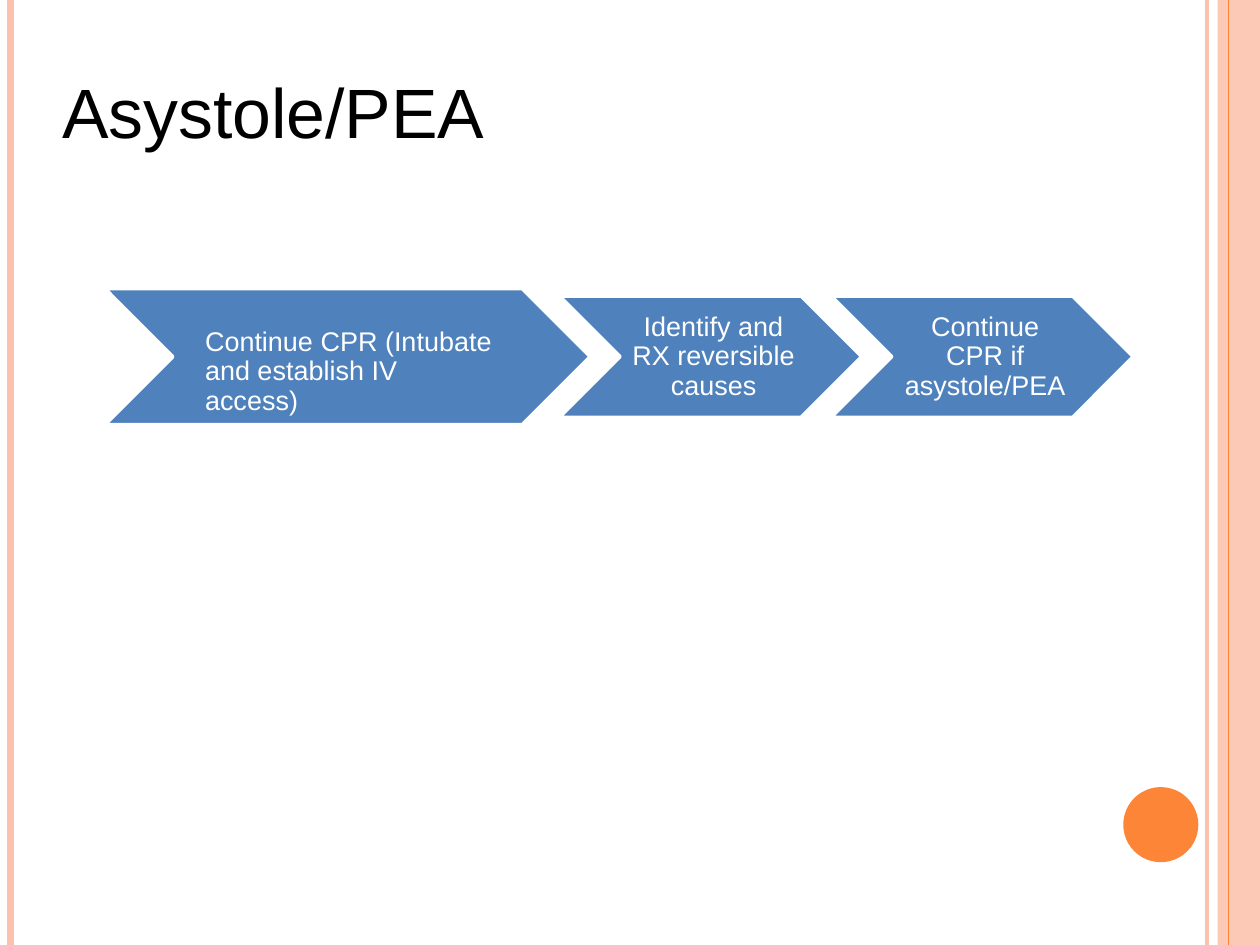
from lxml import etree
from pptx import Presentation
from pptx.dml.color import RGBColor
from pptx.enum.shapes import MSO_CONNECTOR, MSO_SHAPE
from pptx.enum.text import MSO_ANCHOR, MSO_AUTO_SIZE, PP_ALIGN
from pptx.oxml.ns import qn
from pptx.util import Cm, Pt

LEFT, CENTER = PP_ALIGN.LEFT, PP_ALIGN.CENTER
PEACH, ORANGE, BLUE, WHITE, BLACK = "FDC2AD", "FD8537", "4F81BC", "FFFFFF", "000000"
PAGE_WIDTH, PAGE_HEIGHT = 28.02, 21.01
FLOW_MIDDLE = 7.93


def color(value):
    return RGBColor.from_string(value)


def set_text(box, text, size, text_color, align):
    """Fill a box with one paragraph, without margins, anchored at the top."""
    frame = box.text_frame
    frame.text = text
    frame.auto_size = MSO_AUTO_SIZE.NONE
    frame.vertical_anchor = MSO_ANCHOR.TOP
    frame.margin_left = frame.margin_right = frame.margin_top = frame.margin_bottom = 0
    para = frame.paragraphs[0]
    para.alignment = align
    para.space_before = Pt(0)
    for span in para.runs:
        span.font.name = "Arial"
        span.font.size = Pt(size)
        span.font.color.rgb = color(text_color)
    return para


deck = Presentation()
deck.slide_width, deck.slide_height = Cm(PAGE_WIDTH), Cm(PAGE_HEIGHT)
page = deck.slides.add_slide(deck.slide_layouts[5])
shapes = page.shapes

# Side band, circle and vertical rules
decorations = [
    (MSO_SHAPE.RECTANGLE, 27.08, 0, 0.94, PAGE_HEIGHT, PEACH),
    (MSO_SHAPE.OVAL, 24.98, 17.5, 1.67, 1.67, ORANGE),
]
for kind, left, top, width, height, fill in decorations:
    decoration = shapes.add_shape(kind, Cm(left), Cm(top), Cm(width), Cm(height))
    decoration.shadow.inherit = False
    decoration.fill.solid()
    decoration.fill.fore_color.rgb = color(fill)
    decoration.line.fill.background()
    if fill == PEACH:
        fill_color = decoration.fill._xPr.find(qn("a:solidFill"))[0]
        etree.SubElement(fill_color, qn("a:alpha"), val="87000")

for x, weight, rule_color in [(0.23, 4.56, PEACH), (26.84, 3, PEACH), (27.31, 0.72, ORANGE)]:
    rule = shapes.add_connector(MSO_CONNECTOR.STRAIGHT, Cm(x), 0, Cm(x), Cm(PAGE_HEIGHT))
    rule.line.color.rgb = color(rule_color)
    rule.line.width = Pt(weight)
    etree.SubElement(rule._element.spPr, qn("a:effectLst"))

title = shapes.title
title.left, title.top, title.width, title.height = Cm(1.38), Cm(1.52), Cm(9.5), Cm(1.92)
set_text(title, "Asystole/PEA", 44, BLACK, LEFT)
title.text_frame.word_wrap = False

# Treatment steps: arrow left, width, height; text left, top, width
steps = [
    ("Continue CPR (Intubate\vand establish IV\vaccess)", LEFT, 2.34, 10.78, 3.02, 4.56, 7.29, 6.7),
    ("Identify and\vRX reversible\vcauses", CENTER, 12.45, 6.71, 2.69, 14.02, 6.96, 3.7),
    ("Continue\vCPR if\vasystole/PEA", CENTER, 18.49, 6.71, 2.69, 20.06, 6.96, 3.7),
]
for text, align, left, width, height, text_left, text_top, text_width in steps:
    arrow = shapes.add_shape(MSO_SHAPE.CHEVRON, Cm(left), Cm(FLOW_MIDDLE - height / 2),
                             Cm(width), Cm(height))
    arrow.shadow.inherit = False
    arrow.adjustments[0] = 0.5
    arrow.fill.solid()
    arrow.fill.fore_color.rgb = color(BLUE)
    arrow.line.color.rgb = color(WHITE)
    arrow.line.width = Pt(2.04)

    label = shapes.add_textbox(Cm(text_left), Cm(text_top), Cm(text_width), Cm(1.95))
    label.text_frame.word_wrap = True
    para = set_text(label, text, 17, WHITE, align)
    para.line_spacing = Pt(18.4)

deck.save("out.pptx")
